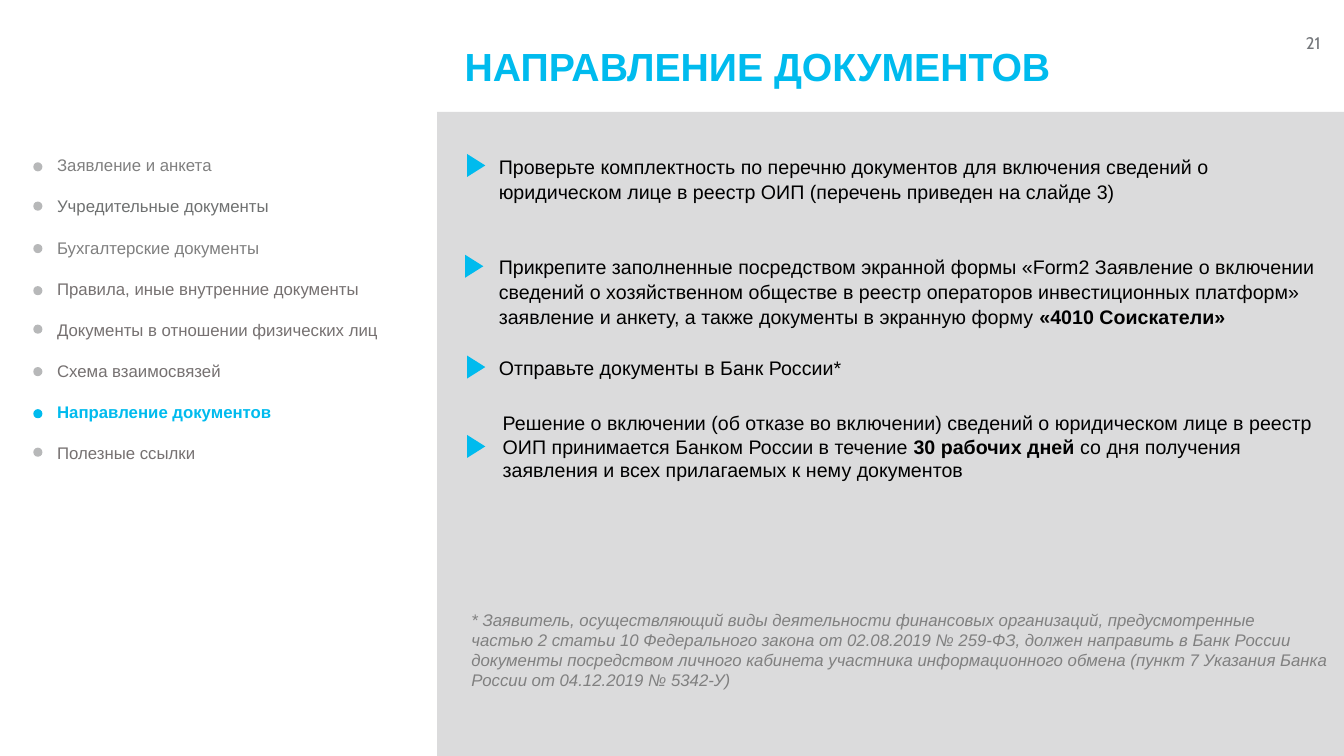
"""Build the slide on submitting documents to the regulator."""
import pptx
import pptx.dml.color
import pptx.enum.shapes
import pptx.enum.text
import pptx.util

Cm = pptx.util.Cm
Pt = pptx.util.Pt
RGBColor = pptx.dml.color.RGBColor
MSO_SHAPE = pptx.enum.shapes.MSO_SHAPE

BLUE = RGBColor(0x00, 0xBB, 0xEE)
BLACK = RGBColor(0x00, 0x00, 0x00)
PANEL = RGBColor(0xDB, 0xDB, 0xDC)
DOT = RGBColor(0xB7, 0xB8, 0xB9)
NUMBER = RGBColor(0x74, 0x77, 0x7B)
GRAY = RGBColor(0x80, 0x80, 0x80)
DARK_GRAY = RGBColor(0x6F, 0x71, 0x71)
WARM_GRAY = RGBColor(0x76, 0x71, 0x71)

prs = pptx.Presentation()
prs.slide_width = Cm(33.87)
prs.slide_height = Cm(19.05)
s = prs.slides.add_slide(prs.slide_layouts[6])


def add_shape(kind, left, top, width, height, color):
    sp = s.shapes.add_shape(kind, Cm(left), Cm(top), Cm(width), Cm(height))
    sp.shadow.inherit = False
    sp.fill.solid()
    sp.fill.fore_color.rgb = color
    sp.line.fill.background()
    return sp


def add_text(left, top, width, height, paragraphs, size, color, font="Arial"):
    """Fill a box; each paragraph is a list of texts, every second one bold."""
    tf = s.shapes.add_textbox(Cm(left), Cm(top), Cm(width), Cm(height)).text_frame
    tf.word_wrap = True
    for i, texts in enumerate(paragraphs):
        p = tf.paragraphs[0] if i == 0 else tf.add_paragraph()
        for j, text in enumerate(texts):
            r = p.add_run()
            r.text = text
            r.font.name = font
            r.font.size = Pt(size)
            r.font.color.rgb = color
            r.font.bold = j % 2 == 1
    return tf


add_shape(MSO_SHAPE.RECTANGLE, 11.02, 2.82, 22.85, 16.23, PANEL)

tf = add_text(27.38, 0.71, 6.15, 0.76, [["21"]], 12, NUMBER, "Cabin")
tf.paragraphs[0].alignment = pptx.enum.text.PP_ALIGN.RIGHT

tf = add_text(11.46, 0.46, 29.21, 2.57, [["НАПРАВЛЕНИЕ ДОКУМЕНТОВ"]], 28, BLUE)
tf.vertical_anchor = pptx.enum.text.MSO_ANCHOR.MIDDLE
tf.paragraphs[0].line_spacing = 0.9
tf.paragraphs[0].runs[0].font.bold = True

steps = [
    ["Проверьте комплектность по перечню документов для включения сведений о "
     "юридическом лице в реестр ОИП (перечень приведен на слайде 3)"],
    ["Прикрепите заполненные посредством экранной формы «Form2 Заявление о включении "
     "сведений о хозяйственном обществе в реестр операторов инвестиционных платформ» "
     "заявление и анкету, а также документы в экранную форму ",
     "«4010 Соискатели»"],
    ["Отправьте документы в Банк России*"],
]
tf = add_text(11.05, 3.73, 22.81, 7.29, steps, 14, BLACK)
for p, gap in zip(tf.paragraphs, (0, 35.8, 17.9)):
    p.line_spacing = 1.07
    p.space_before = Pt(gap)
    pPr = p._p.get_or_add_pPr()
    pPr.set("marL", str(Cm(1.27)))
    pPr.set("indent", "0")

decision = [
    "Решение о включении (об отказе во включении) сведений о юридическом лице в реестр "
    "ОИП принимается Банком России в течение ",
    "30 рабочих дней ",
    "со дня получения заявления и всех прилагаемых к нему документов",
]
add_text(12.42, 10.24, 21.51, 2.06, [decision], 14, BLACK)

footnote = (
    "* Заявитель, осуществляющий виды деятельности финансовых организаций, предусмотренные ",
    "частью 2 статьи 10 Федерального закона от 02.08.2019 № 259-ФЗ, должен направить в Банк "
    "России документы посредством личного кабинета участника информационного обмена "
    "(пункт 7 Указания Банка России от 04.12.2019 № 5342-У)",
)
tf = add_text(11.63, 15.24, 22.25, 2.31, [footnote[:1]], 12, GRAY)
p = tf.paragraphs[0]
p.add_line_break()
p.add_run().text = footnote[1]
for r in p.runs:
    r.font.name = "Arial"
    r.font.size = Pt(12)
    r.font.italic = True
    r.font.color.rgb = GRAY

for left, top in ((11.71, 3.94), (11.66, 6.48), (11.71, 9.02), (11.71, 11.02)):
    sp = add_shape(MSO_SHAPE.ISOSCELES_TRIANGLE, left, top, 0.58, 0.46, BLUE)
    sp.rotation = 90

sections = [
    ("Заявление и анкета", GRAY, 4.09),
    ("Учредительные документы", DARK_GRAY, 5.08),
    ("Бухгалтерские документы", GRAY, 6.15),
    ("Правила, иные внутренние документы", WARM_GRAY, 7.21),
    ("Документы в отношении физических лиц", WARM_GRAY, 8.18),
    ("Схема взаимосвязей", WARM_GRAY, 9.25),
    ("Направление документов", BLUE, 10.31),
    ("Полезные ссылки", WARM_GRAY, 11.28),
]
tf = add_text(1.19, 3.78, 9.37, 8.1, [[name] for name, _, _ in sections], 12, GRAY)
for p, (name, color, dot_top) in zip(tf.paragraphs, sections):
    current = color == BLUE
    p.space_after = Pt(15)
    p.runs[0].font.color.rgb = color
    p.runs[0].font.bold = current
    add_shape(MSO_SHAPE.OVAL, 0.84, dot_top, 0.23, 0.23, BLUE if current else DOT)

prs.save("out.pptx")
